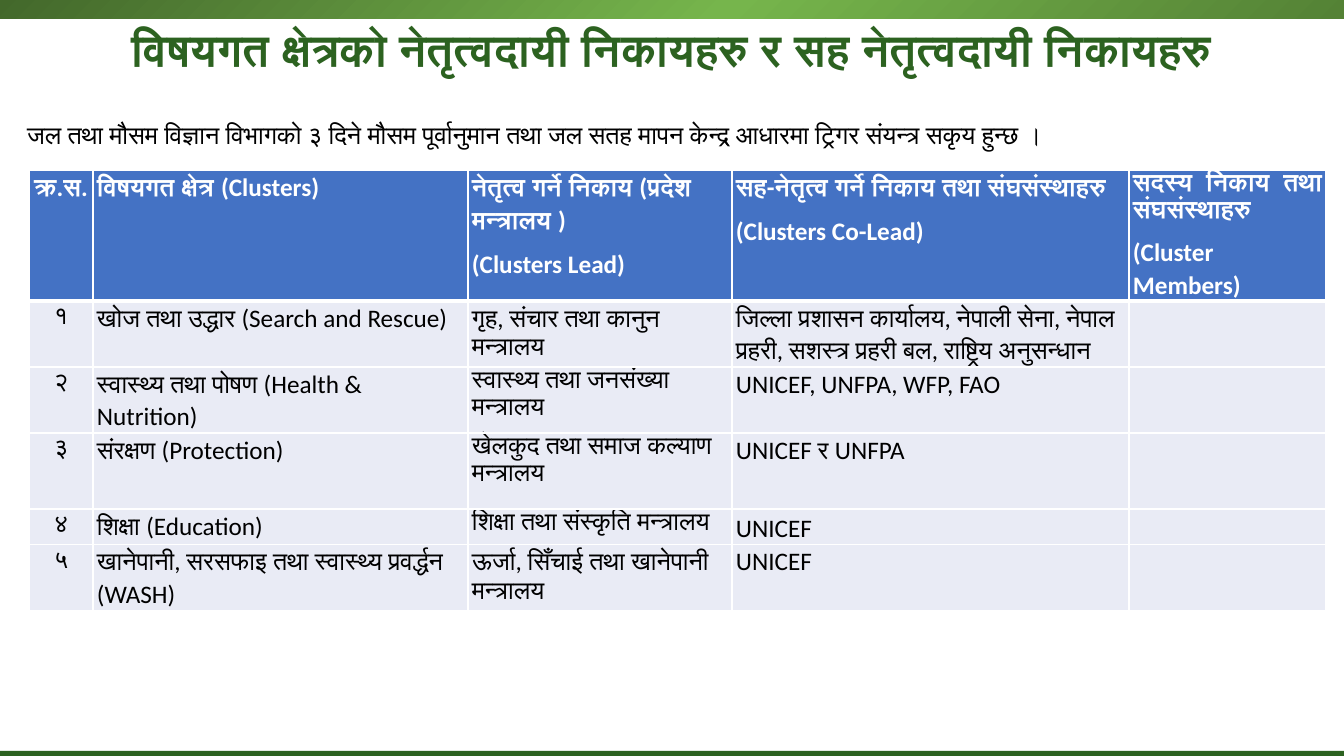
from lxml import etree
from pptx import Presentation
from pptx.dml.color import RGBColor
from pptx.enum.shapes import MSO_SHAPE
from pptx.enum.text import MSO_ANCHOR, PP_ALIGN
from pptx.oxml import parse_xml
from pptx.oxml.ns import nsdecls, qn
from pptx.util import Pt

PX = 914400 / 100.8
RECTANGLE = MSO_SHAPE.RECTANGLE
LEFT, CENTER, JUSTIFY = PP_ALIGN.LEFT, PP_ALIGN.CENTER, PP_ALIGN.JUSTIFY
TOP, MIDDLE = MSO_ANCHOR.TOP, MSO_ANCHOR.MIDDLE

FONT = "Calibri"
GREEN, BLUE, PALE, WHITE, BLACK = "2C6220", "4472C4", "E9EBF5", "FFFFFF", "000000"
BAR_STOPS = [(0, "548235"), (46, "76B54C"), (100, "43682B")]

TITLE = "विषयगत क्षेत्रको नेतृत्वदायी निकायहरु र सह नेतृत्वदायी निकायहरु"
TRIGGER = ("जल तथा मौसम विज्ञान विभागको ३ दिने मौसम पूर्वानुमान तथा "
           "जल सतह मापन केन्द्र आधारमा ट्रिगर संयन्त्र सकृय हुन्छ ।")

COLUMN_WIDTHS = [64, 375, 264, 397, 197]
ROW_HEIGHTS = [129, 66, 66, 76, 35, 66]
HEADERS = [
    ["क्र.स."],
    ["विषयगत क्षेत्र (Clusters)"],
    ["नेतृत्व गर्ने निकाय (प्रदेश मन्त्रालय )", "(Clusters Lead)"],
    ["सह-नेतृत्व गर्ने निकाय तथा संघसंस्थाहरु", "(Clusters Co-Lead)"],
    ["सदस्य निकाय तथा संघसंस्थाहरु", "(Cluster Members)"],
]
HEADER_ALIGNMENTS = [CENTER, JUSTIFY, LEFT, LEFT, JUSTIFY]
CLUSTERS = [
    ["१", "खोज तथा उद्धार (Search and Rescue)", "गृह, संचार तथा कानुन मन्त्रालय",
     "जिल्ला प्रशासन कार्यालय, नेपाली सेना, नेपाल प्रहरी, सशस्त्र प्रहरी बल, राष्ट्रिय अनुसन्धान", ""],
    ["२", "स्वास्थ्य तथा पोषण (Health & Nutrition)", "स्वास्थ्य तथा जनसंख्या मन्त्रालय",
     "UNICEF, UNFPA, WFP, FAO", ""],
    ["३", "संरक्षण (Protection)", "खेलकुद तथा समाज कल्याण मन्त्रालय", "UNICEF र UNFPA", ""],
    ["४", "शिक्षा (Education)", "शिक्षा तथा संस्कृति मन्त्रालय", "UNICEF", ""],
    ["५", "खानेपानी, सरसफाइ तथा स्वास्थ्य प्रवर्द्धन (WASH)",
     "ऊर्जा, सिँचाई तथा खानेपानी मन्त्रालय", "UNICEF", ""],
]
NORMAL_SPACING, WIDE_SPACING = 1.07, 1.15
EDUCATION_CO_LEAD = (4, 3)


def px(length):
    return round(length * PX)


def color(value):
    return RGBColor.from_string(value)


def place(box, left, top, width, height):
    box.left, box.top, box.width, box.height = map(px, (left, top, width, height))


def write(para, text, size, tint, bold=False, alignment=LEFT, spacing=NORMAL_SPACING, after=0):
    para.alignment = alignment
    para.line_spacing = spacing
    para.space_before = Pt(0)
    para.space_after = Pt(after)
    span = para.add_run()
    span.text = text
    span.font.name = FONT
    span.font.size = Pt(size)
    span.font.bold = bold
    span.font.color.rgb = color(tint)


def fill_placeholder(box, bounds, anchor, text, size, tint, **style):
    place(box, *bounds)
    frame = box.text_frame
    frame.word_wrap = True
    frame.vertical_anchor = anchor
    para = frame.paragraphs[0]
    write(para, text, size, tint, **style)
    return para


def remove_bullet(para):
    properties = para._p.get_or_add_pPr()
    properties.set("marL", "0")
    properties.set("indent", "0")
    etree.SubElement(properties, qn("a:buNone"))


def add_bar(page, top, height):
    bar = page.shapes.add_shape(RECTANGLE, 0, px(top), px(1344), px(height))
    bar.shadow.inherit = False
    bar.line.fill.background()
    bar.fill.solid()
    bar.fill.fore_color.rgb = color(GREEN)
    return bar


def set_radial_gradient(shape, stops):
    """Replace the solid fill by a gradient centred on the lower right corner."""
    stop_xml = "".join(f'<a:gs pos="{position * 1000}"><a:srgbClr val="{tint}"/></a:gs>'
                       for position, tint in stops)
    gradient = parse_xml(
        f'<a:gradFill {nsdecls("a")} rotWithShape="1"><a:gsLst>{stop_xml}</a:gsLst>'
        '<a:path path="circle"><a:fillToRect l="100000" t="100000"/></a:path></a:gradFill>')
    properties = shape._element.spPr
    properties.replace(properties.find(qn("a:solidFill")), gradient)


def set_borders(cell, top, bottom):
    properties = cell._tc.get_or_add_tcPr()
    for side, points in (("L", 1), ("R", 1), ("T", top), ("B", bottom)):
        properties.append(parse_xml(
            f'<a:ln{side} {nsdecls("a")} w="{Pt(points)}"><a:solidFill>'
            f'<a:srgbClr val="{WHITE}"/></a:solidFill></a:ln{side}>'))


def format_cell(cell, row):
    set_borders(cell, top=3 if row == 1 else 1, bottom=3 if row == 0 else 1)
    cell.fill.solid()
    cell.fill.fore_color.rgb = color(BLUE if row == 0 else PALE)
    cell.margin_left = cell.margin_right = px(4)
    cell.margin_top = cell.margin_bottom = 0
    cell.vertical_anchor = TOP


def write_cell(cell, row, column, texts):
    frame = cell.text_frame
    is_header = row == 0
    is_number = column == 0 and not is_header
    alignment = HEADER_ALIGNMENTS[column] if is_header else CENTER if is_number else LEFT
    is_wide = is_number or (row, column) == EDUCATION_CO_LEAD
    spacing = WIDE_SPACING if is_wide else NORMAL_SPACING
    for index, text in enumerate(texts):
        para = frame.add_paragraph() if index else frame.paragraphs[0]
        write(para, text, 18, WHITE if is_header else BLACK, is_header, alignment, spacing, after=8)


def add_cluster_table(page, left, top):
    rows = [HEADERS] + [[[text] if text else [] for text in cluster] for cluster in CLUSTERS]
    table = page.shapes.add_table(len(rows), len(HEADERS), px(left), px(top),
                                  px(sum(COLUMN_WIDTHS)), px(sum(ROW_HEIGHTS))).table
    table.horz_banding = False
    for column, width in zip(table.columns, COLUMN_WIDTHS):
        column.width = px(width)
    for row, height in zip(table.rows, ROW_HEIGHTS):
        row.height = px(height)
    for r, texts_by_column in enumerate(rows):
        for c, texts in enumerate(texts_by_column):
            cell = table.cell(r, c)
            format_cell(cell, r)
            write_cell(cell, r, c, texts)


def main():
    deck = Presentation()
    deck.slide_width, deck.slide_height = px(1344), px(756)
    page = deck.slides.add_slide(deck.slide_layouts[1])
    add_bar(page, 751, 5)
    set_radial_gradient(add_bar(page, -3, 22), BAR_STOPS)
    fill_placeholder(page.shapes.title, (67, 27, 1209, 50), MIDDLE, TITLE, 32, GREEN,
                     bold=True, alignment=CENTER, spacing=0.9)
    trigger = fill_placeholder(page.placeholders[1], (17, 112, 1273, 42), TOP, TRIGGER, 18, BLACK,
                               alignment=JUSTIFY)
    remove_bullet(trigger)
    add_cluster_table(page, 29, 170)
    deck.save("out.pptx")


if __name__ == "__main__":
    main()
